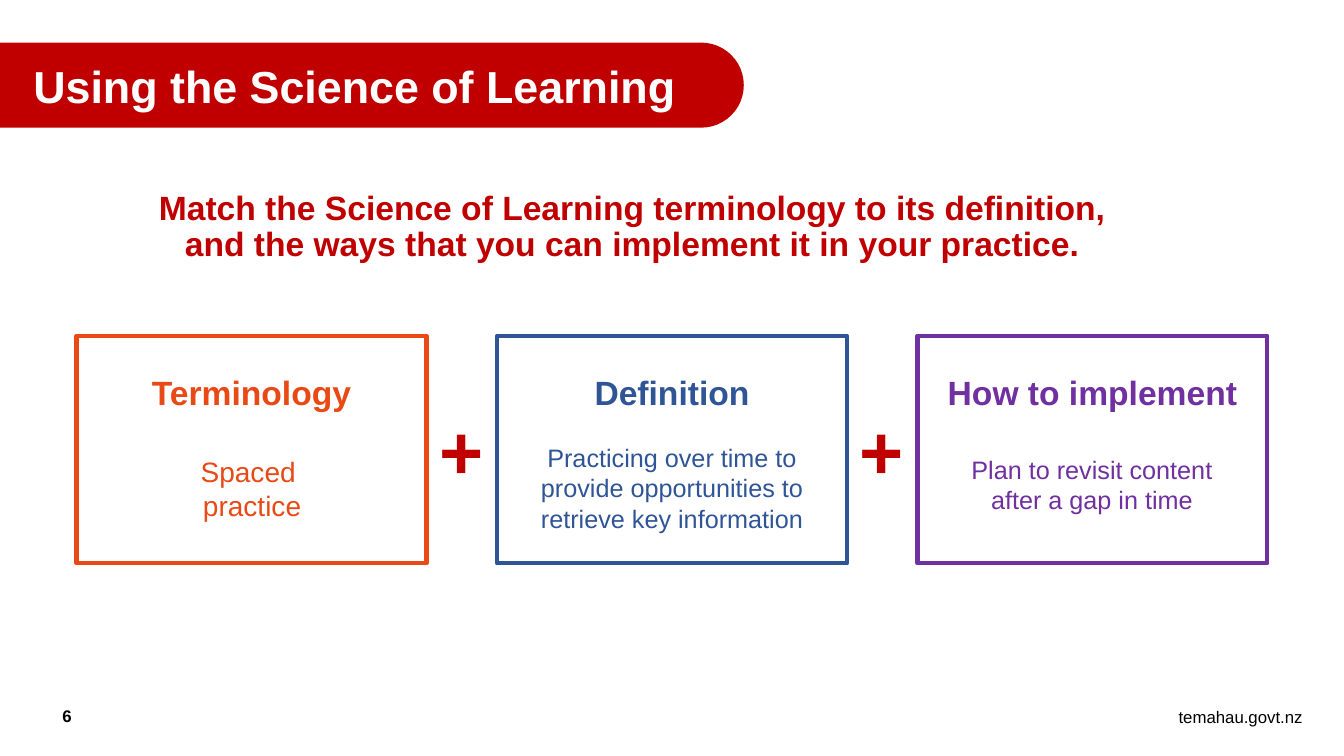
from dataclasses import dataclass

from pptx import Presentation
from pptx.dml.color import RGBColor
from pptx.enum import shapes, text
from pptx.util import Inches, Pt


@dataclass(frozen=True)
class Theme:
    """Colours, font and type sizes of the slide."""
    font: str = "Arial"
    red: str = "C00000"
    orange: str = "E84915"
    blue: str = "2F5597"
    purple: str = "7030A0"
    white: str = "FFFFFF"
    black: str = "000000"
    title: int = 32
    heading: int = 24
    term: int = 20
    body: int = 18
    footer: int = 12
    plus: int = 54


THEME = Theme()
CENTER = text.PP_ALIGN.CENTER
LEFT = text.PP_ALIGN.LEFT
MIDDLE = text.MSO_ANCHOR.MIDDLE
TOP = text.MSO_ANCHOR.TOP


def write(shape, lines, size, color, bold=False, align=CENTER, anchor=TOP):
    """Fill a shape with one formatted paragraph per line."""
    frame = shape.text_frame
    frame.word_wrap = True
    frame.vertical_anchor = anchor
    for index, line in enumerate(lines):
        paragraph = frame.add_paragraph() if index else frame.paragraphs[0]
        paragraph.alignment = align
        run = paragraph.add_run()
        run.text = line
        run.font.name = THEME.font
        run.font.size = Pt(size)
        run.font.bold = bold
        run.font.color.rgb = RGBColor.from_string(color)
    return frame


def add_text(slide, box, lines, size, color, **style):
    """Add a wrapping text box and return its text frame."""
    shape = slide.shapes.add_textbox(*map(Inches, box))
    return write(shape, lines, size, color, **style)


def add_block(slide, kind, box, fill, line, line_width):
    """Add a filled and outlined preset shape."""
    shape = slide.shapes.add_shape(kind, *map(Inches, box))
    shape.shadow.inherit = False
    shape.fill.solid()
    shape.fill.fore_color.rgb = RGBColor.from_string(fill)
    shape.line.color.rgb = RGBColor.from_string(line)
    shape.line.width = Pt(line_width)
    return shape


def add_title(slide, words):
    """Set the title on a red bar that runs in from the left edge."""
    bar = add_block(slide, shapes.MSO_SHAPE.ROUNDED_RECTANGLE,
                    (-0.48, 0.43, 7.85, 0.83), THEME.red, THEME.red, 1)
    bar.adjustments[0] = 0.5
    title = slide.shapes.title
    title.element.addprevious(bar.element)
    title.left, title.top = Inches(0.33), Inches(0.43)
    title.width, title.height = Inches(6.8), Inches(0.83)
    frame = write(title, [words], THEME.title, THEME.white, bold=True,
                  align=LEFT, anchor=MIDDLE)
    frame.margin_left = frame.margin_right = 0


def add_card(slide, left, heading, color):
    """Add an outlined card with its heading near the top."""
    card = add_block(slide, shapes.MSO_SHAPE.RECTANGLE,
                     (left, 3.33, 3.47, 2.26), THEME.white, color, 3)
    frame = write(card, [heading], THEME.heading, color, bold=True)
    frame.margin_top = Inches(0.36)


def main():
    """Build the slide and save it."""
    presentation = Presentation()
    presentation.slide_width = Inches(13.33)
    presentation.slide_height = Inches(7.5)
    slide = presentation.slides.add_slide(presentation.slide_layouts[5])

    add_title(slide, "Using the Science of Learning")
    task = add_text(
        slide, (1.35, 1.85, 9.84, 1.08),
        ["Match the Science of Learning terminology to its definition, "
         "and the ways that you can implement it in your practice."],
        THEME.heading, THEME.red, bold=True)
    task.paragraphs[0].line_spacing = 0.9

    cards = [
        ("Terminology", THEME.orange, ["Spaced ", "practice"],
         THEME.term, (0.18, 4.46, 3.12, 0.77)),
        ("Definition", THEME.blue,
         ["Practicing over time to provide opportunities to "
          "retrieve key information"],
         THEME.body, (0, 4.34, 3.47, 1.01)),
        ("How to implement", THEME.purple,
         ["Plan to revisit content after a gap in time"],
         THEME.body, (0.35, 4.46, 2.76, 0.71)),
    ]
    for index, (heading, color, lines, size, box) in enumerate(cards):
        left = 0.76 + 4.17 * index
        add_card(slide, left, heading, color)
        offset, top, width, height = box
        add_text(slide, (left + offset, top, width, height), lines, size, color)
        if index < len(cards) - 1:
            add_text(slide, (left + 3.5, 3.96, 1.26, 1.01), ["+"],
                     THEME.plus, THEME.red, bold=True, align=LEFT)

    add_text(slide, (0.52, 7, 1.15, 0.2), ["6"], THEME.footer, THEME.black,
             bold=True, align=LEFT, anchor=MIDDLE)
    add_text(slide, (9.99, 6.96, 3.03, 0.3), ["temahau.govt.nz"],
             THEME.footer, THEME.black, align=text.PP_ALIGN.RIGHT)
    presentation.save("out.pptx")


if __name__ == "__main__":
    main()
